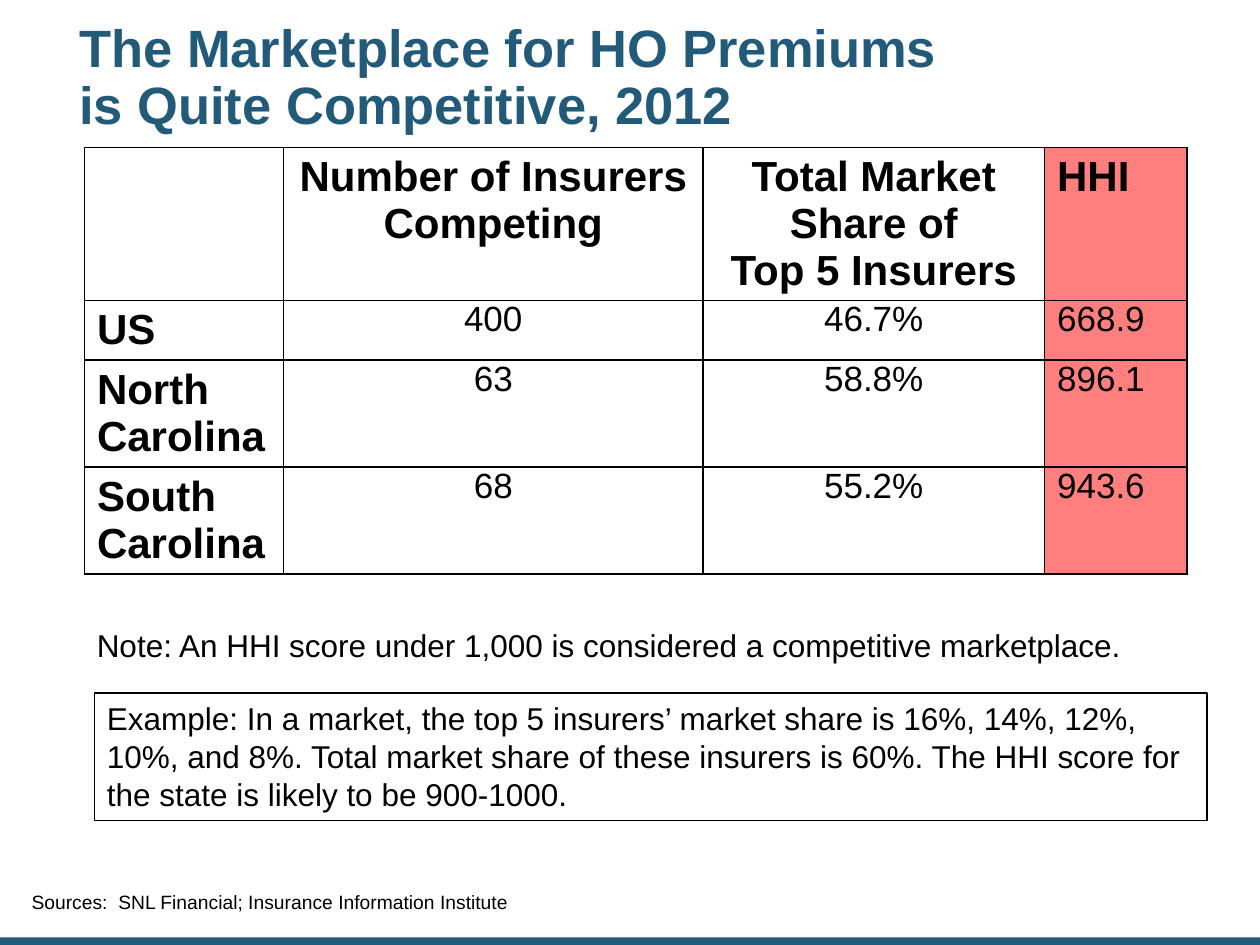
from lxml import etree
from pptx import Presentation
from pptx.dml.color import RGBColor
from pptx.enum.shapes import MSO_SHAPE
from pptx.enum.text import MSO_ANCHOR, PP_ALIGN
from pptx.oxml.ns import qn
from pptx.util import Inches, Pt

LEFT, CENTER, JUSTIFY = PP_ALIGN.LEFT, PP_ALIGN.CENTER, PP_ALIGN.JUSTIFY
TOP, MIDDLE = MSO_ANCHOR.TOP, MSO_ANCHOR.MIDDLE
RECT = MSO_SHAPE.RECTANGLE
BLUE, BLACK, RED = "225A7A", "000000", "FF0000"


def rgb(value):
    return RGBColor.from_string(value)


def write(tf, text, size=18, color=BLACK, bold=False, align=LEFT, spacing=1.0,
          anchor=TOP, margins=(0.1, 0.05)):
    tf.word_wrap = True
    tf.vertical_anchor = anchor
    tf.margin_left = tf.margin_right = Inches(margins[0])
    tf.margin_top = tf.margin_bottom = Inches(margins[1])
    p = tf.paragraphs[0]
    p.text = text
    p.alignment = align
    p.line_spacing = spacing
    for r in p.runs:
        r.font.name = "Arial"
        r.font.size = Pt(size)
        r.font.bold = bold
        r.font.color.rgb = rgb(color)


prs = Presentation()
prs.slide_width, prs.slide_height = Inches(10), Inches(7.5)
s = prs.slides.add_slide(prs.slide_layouts[6])

bar = s.shapes.add_shape(RECT, 0, Inches(7.44), Inches(10), Inches(0.06))
bar.shadow.inherit = False
bar.fill.solid()
bar.fill.fore_color.rgb = rgb(BLUE)
bar.line.fill.background()

rows = [
    ("", "Number of Insurers Competing", "Total Market Share of\vTop 5 Insurers", "HHI"),
    ("US", "400", "46.7%", "668.9"),
    ("North Carolina", "63", "58.8%", "896.1"),
    ("South Carolina", "68", "55.2%", "943.6"),
]
col_widths = [1.58, 3.33, 2.71, 1.13]
row_heights = [1.21, 0.47, 0.85, 0.85]
table = s.shapes.add_table(4, 4, Inches(0.67), Inches(1.17),
                           Inches(sum(col_widths)), Inches(sum(row_heights))).table
table.first_row = table.horz_banding = False
for col, width in zip(table.columns, col_widths):
    col.width = Inches(width)
for row, height in zip(table.rows, row_heights):
    row.height = Inches(height)

for i, values in enumerate(rows):
    for j, value in enumerate(values):
        cell = table.cell(i, j)
        heading = i == 0 or j == 0
        if j in (1, 2):
            align = CENTER
        else:
            align = JUSTIFY if heading else LEFT
        write(cell.text_frame, value, size=24 if heading else 20, bold=heading,
              align=align, spacing=1.0 if heading else 0.8)
        tcPr = cell._tc.get_or_add_tcPr()
        for side in ("lnL", "lnR", "lnT", "lnB"):
            ln = etree.SubElement(tcPr, qn("a:" + side), w=str(Pt(1)))
            fill = etree.SubElement(ln, qn("a:solidFill"))
            etree.SubElement(fill, qn("a:srgbClr"), val=BLACK)
        if j == 3:
            cell.fill.solid()
            cell.fill.fore_color.rgb = rgb(RED)
            clr = tcPr.find(qn("a:solidFill")).find(qn("a:srgbClr"))
            etree.SubElement(clr, qn("a:alpha"), val="50000")
        else:
            cell.fill.background()

texts = [
    ("Sources:  SNL Financial; Insurance Information Institute",
     (0.25, 7.11, 8.79, 0.23), dict(size=11, spacing=0.75, margins=(0, 0))),
    ("The Marketplace for HO Premiums\vis Quite Competitive, 2012",
     (0.58, 0, 7.67, 1.25),
     dict(size=30, color=BLUE, bold=True, spacing=0.9, anchor=MIDDLE, margins=(0.05, 0.05))),
    ("Note: An HHI score under 1,000 is considered a competitive marketplace.",
     (0.67, 4.92, 8.83, 0.4), {}),
]
for text, box, fmt in texts:
    sp = s.shapes.add_textbox(*map(Inches, box))
    write(sp.text_frame, text, **fmt)

example = s.shapes.add_shape(RECT, Inches(0.75), Inches(5.5), Inches(8.83), Inches(1.01))
example.shadow.inherit = False
example.fill.background()
example.line.color.rgb = rgb(BLACK)
example.line.width = Pt(0.75)
write(example.text_frame,
      "Example: In a market, the top 5 insurers’ market share is 16%, 14%, 12%, 10%, and 8%. "
      "Total market share of these insurers is 60%. "
      "The HHI score for the state is likely to be 900-1000.")

prs.save("out.pptx")
